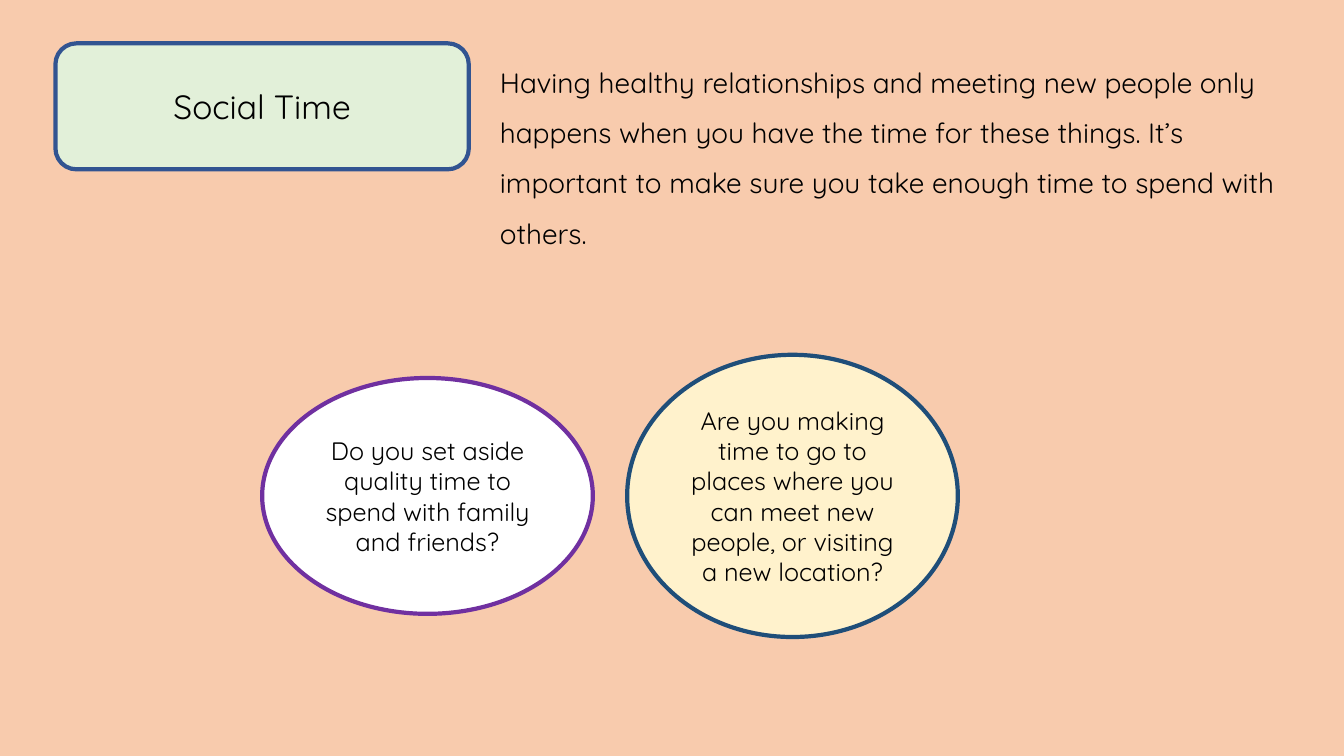
from pptx import Presentation
from pptx.dml.color import RGBColor
from pptx.enum.shapes import MSO_SHAPE as SHAPE
from pptx.enum.text import MSO_ANCHOR as ANCHOR, MSO_AUTO_SIZE as AUTO, PP_ALIGN as ALIGN
from pptx.util import Inches, Pt

PEACH = RGBColor(0xF8, 0xCB, 0xAD)
GREEN = RGBColor(0xE2, 0xF0, 0xD9)
BLUE = RGBColor(0x32, 0x54, 0x91)
WHITE = RGBColor(0xFF, 0xFF, 0xFF)
PURPLE = RGBColor(0x70, 0x30, 0xA0)
CREAM = RGBColor(0xFF, 0xF2, 0xCC)
NAVY = RGBColor(0x1F, 0x4E, 0x79)
BLACK = RGBColor(0, 0, 0)


def add_text(tf, text, size):
    tf.word_wrap = True
    p = tf.paragraphs[0]
    r = p.add_run()
    r.text = text
    r.font.name = "Quicksand"
    r.font.size = Pt(size)
    r.font.color.rgb = BLACK
    return p


prs = Presentation()
prs.slide_width, prs.slide_height = Inches(13.33), Inches(7.5)
s = prs.slides.add_slide(prs.slide_layouts[6])
s.background.fill.solid()
s.background.fill.fore_color.rgb = PEACH

# Title box and question bubbles
bubbles = [
    (SHAPE.ROUNDED_RECTANGLE, 0.55, 0.43, 4.1, 1.25, GREEN, BLUE, 24, "Social Time"),
    (SHAPE.OVAL, 2.6, 3.75, 3.28, 2.34, WHITE, PURPLE, 18,
     "Do you set aside quality time to spend with family and friends?"),
    (SHAPE.OVAL, 6.22, 3.52, 3.28, 2.8, CREAM, NAVY, 18,
     "Are you making time to go to places where you can meet new people, "
     "or visiting a new location?"),
]
for kind, x, y, w, h, fill, line, size, text in bubbles:
    sp = s.shapes.add_shape(kind, Inches(x), Inches(y), Inches(w), Inches(h))
    sp.shadow.inherit = False
    sp.fill.solid()
    sp.fill.fore_color.rgb = fill
    sp.line.color.rgb = line
    sp.line.width = Pt(3)
    sp.text_frame.vertical_anchor = ANCHOR.MIDDLE
    add_text(sp.text_frame, text, size).alignment = ALIGN.CENTER

# Introduction
intro = s.shapes.add_textbox(Inches(4.86), Inches(0.43), Inches(7.92), Inches(2.06))
p = add_text(intro.text_frame,
             "Having healthy relationships and meeting new people only happens when "
             "you have the time for these things. It’s important to make sure you take "
             "enough time to spend with others.", 20)
p.line_spacing = 1.5
intro.text_frame.auto_size = AUTO.SHAPE_TO_FIT_TEXT

prs.save("out.pptx")
